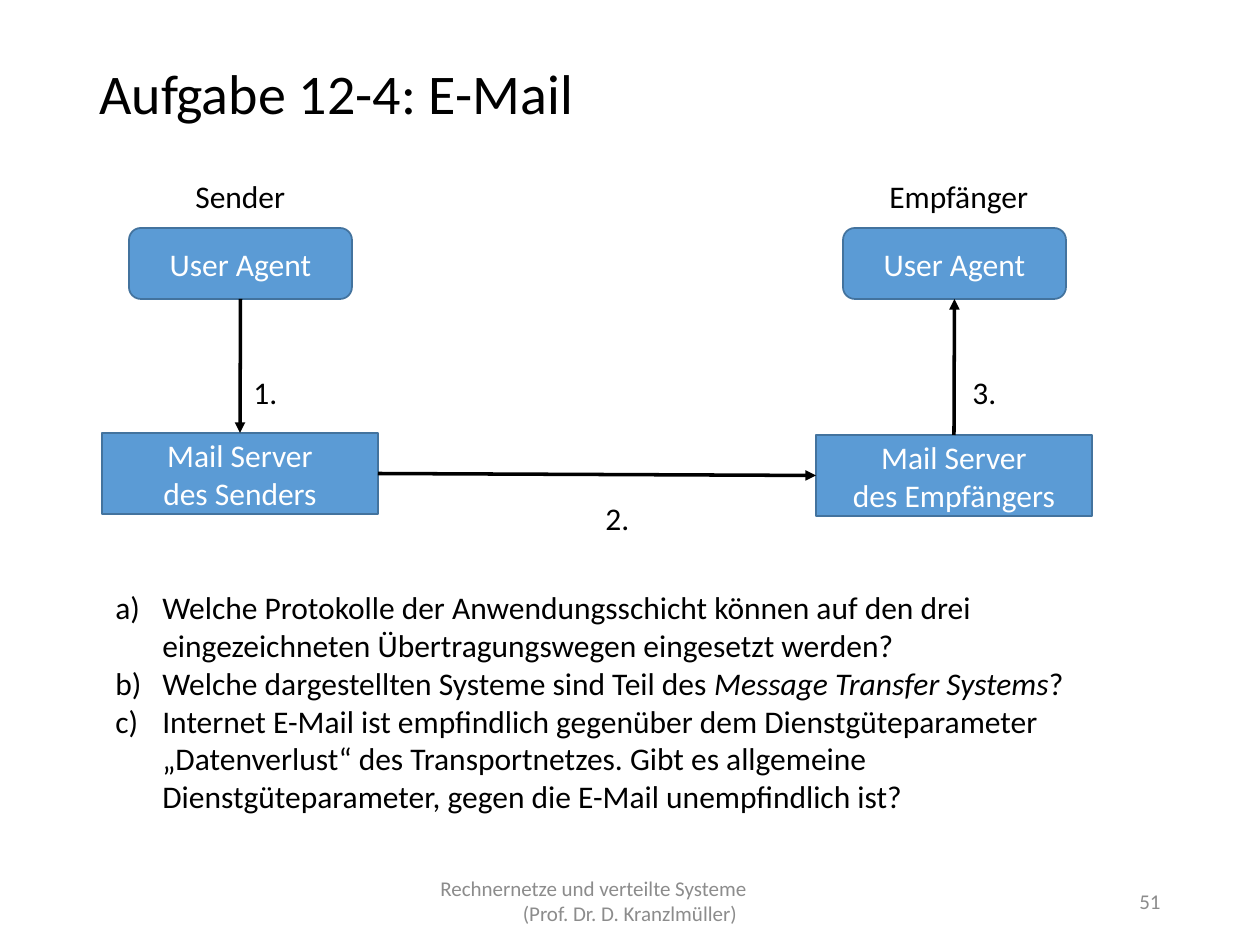
from dataclasses import dataclass

from lxml import etree
from pptx import Presentation
from pptx.dml.color import RGBColor
from pptx.enum.shapes import MSO_CONNECTOR, MSO_SHAPE
from pptx.enum.text import MSO_ANCHOR, MSO_AUTO_SIZE, PP_ALIGN
from pptx.oxml.ns import qn
from pptx.util import Pt

PX = 914400 / 126
FONT = "Calibri"
BLACK, WHITE, GREY = "000000", "FFFFFF", "8C8C8C"
BLUE, EDGE = "5B9BD5", "43739E"
ROUND, RECT = MSO_SHAPE.ROUNDED_RECTANGLE, MSO_SHAPE.RECTANGLE
LEFT, MID, RIGHT = PP_ALIGN.LEFT, PP_ALIGN.CENTER, PP_ALIGN.RIGHT
CENTER, TOP = MSO_ANCHOR.MIDDLE, MSO_ANCHOR.TOP
FIT = MSO_AUTO_SIZE.SHAPE_TO_FIT_TEXT
NORTH, WEST, SOUTH, EAST = range(4)  # connection sites of a box


@dataclass
class Node:
    text: str
    form: int
    x: int
    y: int
    w: int
    h: int


@dataclass
class Link:
    start: int
    out: int
    end: int
    into: int


@dataclass
class Label:
    text: str
    x: int
    y: int
    w: int


NODES = [
    Node("User Agent", ROUND, 129, 228, 223, 71),
    Node("User Agent", ROUND, 843, 228, 223, 71),
    Node("Mail Server\ndes Senders", RECT, 102, 433, 276, 81),
    Node("Mail Server\ndes Empfängers", RECT, 816, 435, 276, 81),
]
LINKS = [
    Link(0, SOUTH, 2, NORTH),
    Link(2, EAST, 3, WEST),
    Link(3, NORTH, 1, SOUTH),
]
LABELS = [
    Label("1.", 241, 367, 49),
    Label("2.", 593, 493, 49),
    Label("3.", 960, 367, 49),
    Label("Sender", 183, 171, 116),
    Label("Empfänger", 877, 171, 165),
]
# Each question is a list of (text, italic) parts
TASKS = [
    [("Welche Protokolle der Anwendungsschicht können auf den drei "
      "eingezeichneten Übertragungswegen eingesetzt werden?", False)],
    [("Welche dargestellten Systeme sind Teil des ", False),
     ("Message Transfer Systems", True), ("?", False)],
    [("Internet E-Mail ist empfindlich gegenüber dem Dienstgüteparameter "
      "„Datenverlust“ des Transportnetzes. Gibt es allgemeine "
      "Dienstgüteparameter, gegen die E-Mail unempfindlich ist?", False)],
]


def px(n: int) -> int:
    return round(n * PX)


def tint(code: str) -> RGBColor:
    return RGBColor.from_string(code)


def style(frame, size: int, color: str, align=LEFT) -> None:
    for para in frame.paragraphs:
        para.alignment = align
        for run in para.runs:
            run.font.name = FONT
            run.font.size = Pt(size)
            run.font.color.rgb = tint(color)


def add_text(slide, text: str, x: int, y: int, w: int, h: int, size=18,
             color=BLACK, align=LEFT, anchor=TOP, wrap=True):
    frame = slide.shapes.add_textbox(px(x), px(y), px(w), px(h)).text_frame
    frame.text = text
    frame.word_wrap = wrap
    frame.vertical_anchor = anchor
    style(frame, size, color, align)
    return frame


def add_node(slide, node: Node):
    shape = slide.shapes.add_shape(
        node.form, px(node.x), px(node.y), px(node.w), px(node.h))
    shape.shadow.inherit = False
    shape.fill.solid()
    shape.fill.fore_color.rgb = tint(BLUE)
    shape.line.color.rgb = tint(EDGE)
    shape.line.width = Pt(1)
    frame = shape.text_frame
    frame.text = node.text
    frame.vertical_anchor = CENTER
    style(frame, 18, WHITE, MID)
    return shape


def add_link(slide, link: Link, boxes: list) -> None:
    line = slide.shapes.add_connector(MSO_CONNECTOR.STRAIGHT, 0, 0, 0, 0)
    line.begin_connect(boxes[link.start], link.out)
    line.end_connect(boxes[link.end], link.into)
    line.line.color.rgb = tint(BLACK)
    line.line.width = Pt(2)
    etree.SubElement(line.line._get_or_add_ln(), qn("a:tailEnd"),
                     type="triangle")
    etree.SubElement(line._element.spPr, qn("a:effectLst"))


def indent(para, left: int, first: int = 0) -> None:
    props = para._p.get_or_add_pPr()
    props.set("marL", str(px(left)))
    props.set("indent", str(px(first)))


def add_tasks(slide) -> None:
    frame = add_text(slide, "", 103, 582, 988, 280)
    for i, parts in enumerate(TASKS):
        para = frame.add_paragraph() if i else frame.paragraphs[0]
        indent(para, 47, -47)
        props = para._p.get_or_add_pPr()
        etree.SubElement(props, qn("a:buFont"), typeface=FONT)
        etree.SubElement(props, qn("a:buAutoNum"), type="alphaLcParenR")
        for text, slant in parts:
            run = para.add_run()
            run.text = text
            run.font.italic = slant
    style(frame, 18, BLACK)
    frame.auto_size = FIT


def main() -> None:
    deck = Presentation()
    deck.slide_width, deck.slide_height = px(1260), px(945)
    slide = deck.slides.add_slide(deck.slide_layouts[6])

    # Title
    title = add_text(slide, "Aufgabe 12-4: E-Mail", 87, 50, 1086, 92, 32,
                     anchor=CENTER)
    title.paragraphs[0].line_spacing = 0.9

    # Footer: the first line starts further left than the centred second
    foot = add_text(
        slide,
        "Rechnernetze und verteilte Systeme\n(Prof. Dr. D. Kranzlmüller)",
        417, 876, 426, 50, 12, GREY, MID, CENTER)
    foot.paragraphs[0].alignment = LEFT
    indent(foot.paragraphs[0], 11)
    add_text(slide, "51", 890, 876, 283, 50, 12, GREY, RIGHT, CENTER)

    # Mail route
    boxes = [add_node(slide, node) for node in NODES]
    for link in LINKS:
        add_link(slide, link, boxes)
    for label in LABELS:
        frame = add_text(slide, label.text, label.x, label.y, label.w, 50,
                         wrap=False)
        frame.auto_size = FIT

    # Questions
    add_tasks(slide)
    deck.save("out.pptx")


if __name__ == "__main__":
    main()
